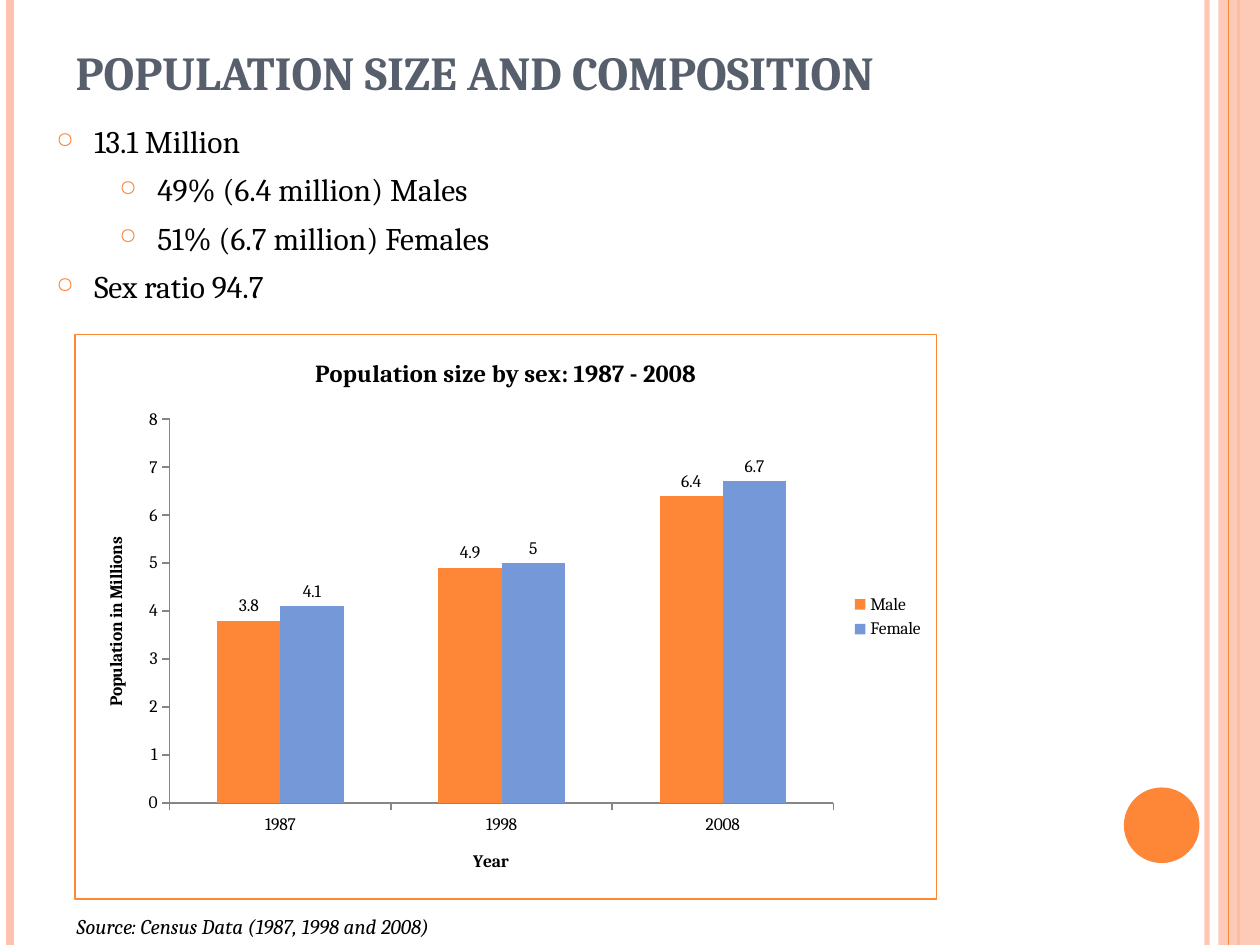
from lxml import etree
from pptx import Presentation
from pptx.chart.data import CategoryChartData
from pptx.dml.color import RGBColor
from pptx.enum.chart import XL_CHART_TYPE as ChartType
from pptx.enum.chart import XL_LABEL_POSITION as LabelPosition
from pptx.enum.chart import XL_LEGEND_POSITION as LegendPosition
from pptx.enum.chart import XL_TICK_MARK as TickMark
from pptx.enum.shapes import MSO_CONNECTOR as Connector
from pptx.enum.shapes import MSO_SHAPE as Shape
from pptx.enum.text import MSO_ANCHOR as Anchor
from pptx.enum.text import MSO_AUTO_SIZE as AutoSize
from pptx.enum.text import PP_ALIGN as Align
from pptx.oxml import parse_xml
from pptx.oxml.ns import nsdecls, qn
from pptx.util import Inches, Pt

FONT = "Cambria"
ORANGE, PINK, BLUE = "FE8637", "FEC3AE", "7598D9"
SLATE, BLACK, WHITE, GREY = "575F6D", "000000", "FFFFFF", "868686"


def color(value):
    return RGBColor.from_string(value)


def style_font(font, size, value=BLACK, bold=False, italic=False):
    font.name, font.size = FONT, Pt(size)
    font.bold, font.italic = bold, italic
    font.color.rgb = color(value)


def set_opacity(fill_owner, percent):
    for node in fill_owner.iter(qn("a:srgbClr")):
        etree.SubElement(node, qn("a:alpha")).set("val", str(percent * 1000))


def add_stripe(slide, x, height, value, width, opacity=100):
    line = slide.shapes.add_connector(
        Connector.STRAIGHT, Inches(x), 0, Inches(x), Inches(height))
    line.line.color.rgb = color(value)
    line.line.width = Pt(width)
    properties = line._element.spPr
    if opacity < 100:
        set_opacity(properties, opacity)
    etree.SubElement(properties, qn("a:effectLst"))


def add_filled_shape(slide, kind, box, value, opacity=100):
    shape = slide.shapes.add_shape(kind, *map(Inches, box))
    shape.shadow.inherit = False
    shape.fill.solid()
    shape.fill.fore_color.rgb = color(value)
    shape.line.fill.background()
    if opacity < 100:
        set_opacity(shape._element.spPr, opacity)


def add_decoration(slide, height):
    add_stripe(slide, 9.58, height, PINK, 3, 93)
    add_stripe(slide, 0.08, height, PINK, 4.5)
    add_stripe(slide, 9.83, height, ORANGE, 1.5)
    add_filled_shape(slide, Shape.RECTANGLE, (9.67, 0, 0.33, height), PINK, 87)
    add_stripe(slide, 9.75, height, ORANGE, 0.75)
    add_filled_shape(slide, Shape.OVAL, (8.92, 6.25, 0.6, 0.6), ORANGE)


def place_title(slide, box, text):
    title = slide.shapes.title
    title.left, title.top, title.width, title.height = map(Inches, box)
    frame = title.text_frame
    frame.text = text
    frame.vertical_anchor = Anchor.BOTTOM
    frame.auto_size = AutoSize.NONE
    paragraph = frame.paragraphs[0]
    paragraph.alignment = Align.LEFT
    style_font(paragraph.runs[0].font, 27, SLATE, bold=True)


def set_bullet(paragraph, indent):
    properties = paragraph._p.get_or_add_pPr()
    properties.set("marL", str(Inches(indent)))
    properties.set("indent", str(Inches(-0.3)))
    bullet_color = etree.SubElement(properties, qn("a:buClr"))
    etree.SubElement(bullet_color, qn("a:srgbClr")).set("val", ORANGE)
    etree.SubElement(properties, qn("a:buSzPct")).set("val", "70000")
    etree.SubElement(properties, qn("a:buChar")).set("char", "○")


def add_bullets(slide, box, items):
    frame = slide.shapes.add_textbox(*map(Inches, box)).text_frame
    frame.word_wrap = True
    for index, (level, text) in enumerate(items):
        paragraph = frame.add_paragraph() if index else frame.paragraphs[0]
        paragraph.text = text
        paragraph.level = level
        paragraph.space_before = Pt(6)
        set_bullet(paragraph, 0.3 + 0.5 * level)
        style_font(paragraph.runs[0].font, 18)


def style_axis(axis, title):
    axis.has_title = True
    axis.axis_title.text_frame.text = title
    run = axis.axis_title.text_frame.paragraphs[0].runs[0]
    style_font(run.font, 10, bold=True)
    axis.major_tick_mark = TickMark.OUTSIDE
    axis.minor_tick_mark = TickMark.NONE
    axis.format.line.color.rgb = color(GREY)
    axis.format.line.width = Pt(0.75)
    style_font(axis.tick_labels.font, 10)


def set_plot_layout(chart, x, y, width, height):
    plot_area = chart._chartSpace.chart.plotArea
    for layout in plot_area.findall(qn("c:layout")):
        plot_area.remove(layout)
    plot_area.insert(0, parse_xml(
        f'<c:layout {nsdecls("c")}><c:manualLayout>'
        '<c:layoutTarget val="inner"/><c:xMode val="edge"/><c:yMode val="edge"/>'
        f'<c:x val="{x}"/><c:y val="{y}"/><c:w val="{width}"/><c:h val="{height}"/>'
        '</c:manualLayout></c:layout>'))


def set_border(chart, value):
    border = parse_xml(
        f'<c:spPr {nsdecls("c", "a")}><a:solidFill><a:srgbClr val="{WHITE}"/></a:solidFill>'
        f'<a:ln w="{Pt(0.75)}"><a:solidFill><a:srgbClr val="{value}"/></a:solidFill></a:ln>'
        '</c:spPr>')
    chart._chartSpace.chart.addnext(border)


def add_population_chart(slide, box):
    data = CategoryChartData()
    data.categories = ["1987", "1998", "2008"]
    data.add_series("Male", (3.8, 4.9, 6.4))
    data.add_series("Female", (4.1, 5, 6.7))
    chart = slide.shapes.add_chart(
        ChartType.COLUMN_CLUSTERED, *map(Inches, box), data).chart
    style_font(chart.font, 10)

    chart.has_title = True
    chart.chart_title.text_frame.text = "Population size by sex: 1987 - 2008"
    title_run = chart.chart_title.text_frame.paragraphs[0].runs[0]
    style_font(title_run.font, 14, bold=True)

    style_axis(chart.category_axis, "Year")
    style_axis(chart.value_axis, "Population in Millions")
    chart.value_axis.minimum_scale = 0
    chart.value_axis.maximum_scale = 8
    chart.value_axis.major_unit = 1
    gridlines = chart.value_axis.major_gridlines.format.line
    gridlines.color.rgb = color(WHITE)
    gridlines.width = Pt(0.75)

    chart.has_legend = True
    chart.legend.position = LegendPosition.RIGHT
    chart.legend.include_in_layout = False
    style_font(chart.legend.font, 10)

    plot = chart.plots[0]
    plot.vary_by_categories = False
    plot.gap_width, plot.overlap = 150, 0
    for series, value in zip(plot.series, (ORANGE, BLUE)):
        series.format.fill.solid()
        series.format.fill.fore_color.rgb = color(value)
        labels = series.data_labels
        labels.show_value = True
        labels.position = LabelPosition.OUTSIDE_END
        style_font(labels.font, 10)

    set_plot_layout(chart, 0.11, 0.15, 0.77, 0.68)
    set_border(chart, ORANGE)


def add_source_note(slide, box, text):
    frame = slide.shapes.add_textbox(*map(Inches, box)).text_frame
    frame.word_wrap = False
    frame.auto_size = AutoSize.SHAPE_TO_FIT_TEXT
    frame.text = text
    style_font(frame.paragraphs[0].runs[0].font, 12, italic=True)


def main():
    presentation = Presentation()
    presentation.slide_width, presentation.slide_height = Inches(10), Inches(7.5)
    slide = presentation.slides.add_slide(presentation.slide_layouts[5])
    add_decoration(slide, 7.5)
    place_title(slide, (0.5, 0.3, 9.15, 0.54), "POPULATION SIZE AND COMPOSITION")
    add_bullets(slide, (0.35, 0.92, 4.8, 1.65), [
        (0, "13.1 Million"),
        (1, "49% (6.4 million) Males"),
        (1, "51% (6.7 million) Females"),
        (0, "Sex ratio 94.7"),
    ])
    add_population_chart(slide, (0.59, 2.65, 6.85, 4.49))
    add_source_note(slide, (0.51, 7.2, 3.57, 0.3),
                    "Source: Census Data (1987, 1998 and 2008)")
    presentation.save("out.pptx")


if __name__ == "__main__":
    main()
